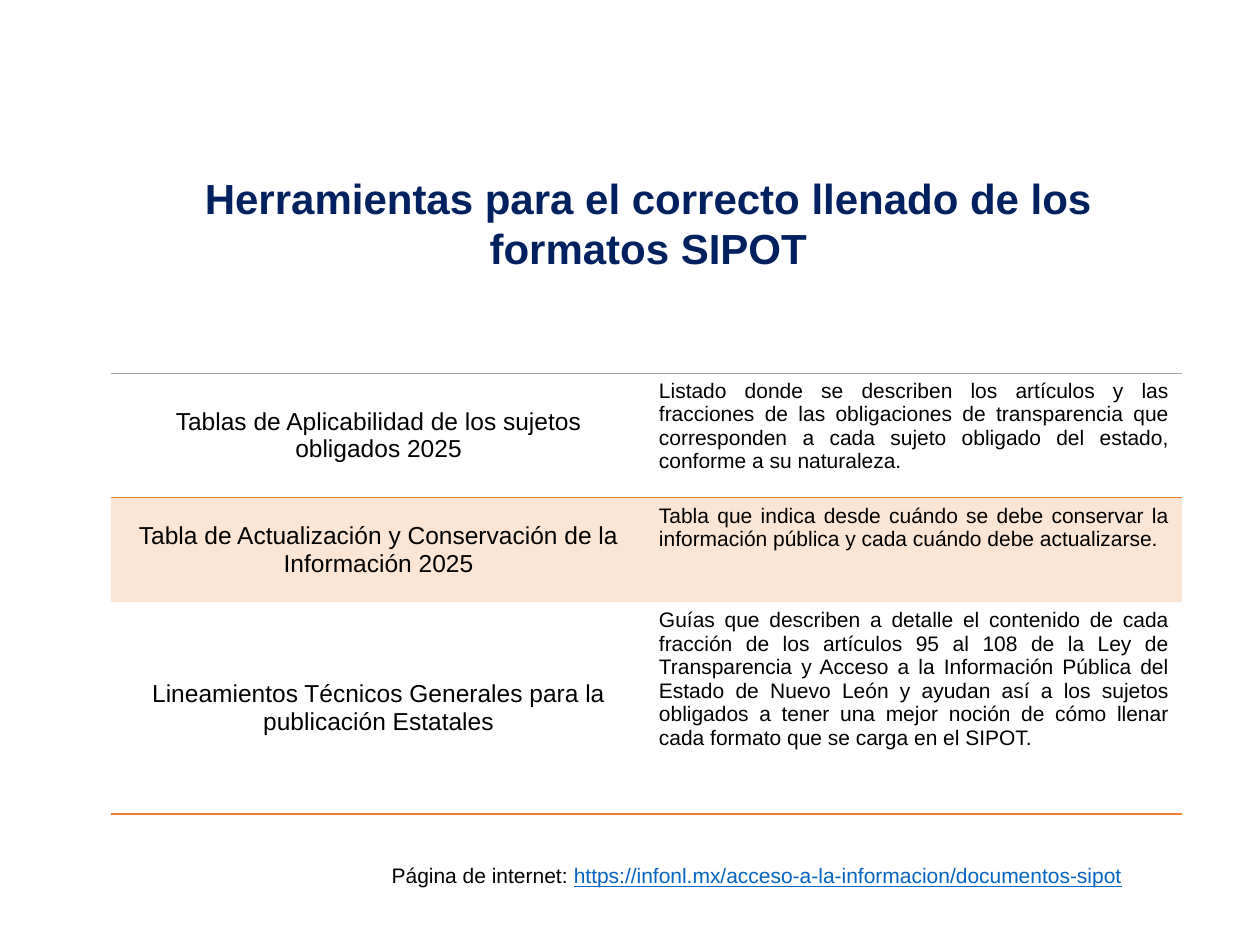
from pptx import Presentation
from pptx import util as u
from pptx.dml.color import RGBColor
from pptx.enum import text
from pptx.oxml.ns import qn
from lxml import etree

PX = 9144
ORANGE, GREY, BLACK = "ED7D31", "A5A5A5", "000000"
ALIGN = text.PP_ALIGN
TOOLS = [
    (99, "Tablas de Aplicabilidad de los sujetos obligados 2025",
     "Listado donde se describen los artículos y las fracciones de las "
     "obligaciones de transparencia que corresponden a cada sujeto obligado "
     "del estado, conforme a su naturaleza."),
    (83, "Tabla de Actualización y Conservación de la Información 2025",
     "Tabla que indica desde cuándo se debe conservar la información pública "
     "y cada cuándo debe actualizarse."),
    (168, "Lineamientos Técnicos Generales para la publicación Estatales",
     "Guías que describen a detalle el contenido de cada fracción de los "
     "artículos 95 al 108 de la Ley de Transparencia y Acceso a la Información "
     "Pública del Estado de Nuevo León y ayudan así a los sujetos obligados a "
     "tener una mejor noción de cómo llenar cada formato que se carga en el "
     "SIPOT."),
]
RULES = [(GREY, 0.5), (ORANGE, 1), None, (ORANGE, 1)]


def paint(hue):
    """Return the colour for a hex string."""
    return RGBColor.from_string(hue)


def scale(box):
    """Turn a box in px into EMU."""
    return [n * PX for n in box]


def write(para, words, size, hue=BLACK, bold=False, line=False):
    """Add one formatted run to a paragraph."""
    run = para.add_run()
    run.text = words
    font = run.font
    font.name, font.size = "Arial", u.Pt(size)
    font.bold, font.underline = bold, line
    font.color.rgb = paint(hue)


def edge(cell, side, rule):
    """Set one cell border, or clear it when there is no rule."""
    line = etree.SubElement(cell._tc.get_or_add_tcPr(), qn("a:ln" + side))
    if not rule:
        line.set("w", "0")
        etree.SubElement(line, qn("a:noFill"))
        return
    hue, width = rule
    line.set("w", str(u.Pt(width)))
    fill = etree.SubElement(line, qn("a:solidFill"))
    etree.SubElement(fill, qn("a:srgbClr"), val=hue)


def shade(cell, tint):
    """Fill a cell with a pale tint, or leave it clear."""
    if not tint:
        cell.fill.background()
        return
    cell.fill.solid()
    cell.fill.fore_color.rgb = paint(ORANGE)
    hue = cell._tc.tcPr.find(qn("a:solidFill"))[0]
    etree.SubElement(hue, qn("a:alpha"), val="20000")


def add_title(slide, box):
    """Place the heading in the title placeholder."""
    title = slide.shapes.title
    title.left, title.top, title.width, title.height = scale(box)
    frame = title.text_frame
    frame.word_wrap = True
    frame.auto_size = text.MSO_AUTO_SIZE.NONE
    frame.vertical_anchor = text.MSO_ANCHOR.MIDDLE
    para = frame.paragraphs[0]
    para.alignment = ALIGN.CENTER
    write(para, "Herramientas para el correcto llenado de los formatos SIPOT",
          24, "002060", bold=True)


def add_tools(slide, box):
    """Place the table of tools and their descriptions."""
    table = slide.shapes.add_table(len(TOOLS), 2, *scale(box)).table
    table.first_row = table.horz_banding = False
    for col in table.columns:
        col.width = box[2] * PX // 2
    for i, (height, *words) in enumerate(TOOLS):
        table.rows[i].height = height * PX
        for j, (size, align, anchor) in enumerate([
                (14, ALIGN.CENTER, text.MSO_ANCHOR.MIDDLE),
                (12, ALIGN.JUSTIFY, text.MSO_ANCHOR.TOP)]):
            cell = table.cell(i, j)
            cell.vertical_anchor = anchor
            for side, rule in zip("LRTB", (None, None, *RULES[i:i + 2])):
                edge(cell, side, rule)
            shade(cell, i % 2)
            para = cell.text_frame.paragraphs[0]
            para.alignment = align
            write(para, words[j], size)


def add_source(slide, box):
    """Place the line with the web address."""
    frame = slide.shapes.add_textbox(*scale(box)).text_frame
    frame.word_wrap = True
    frame.auto_size = text.MSO_AUTO_SIZE.SHAPE_TO_FIT_TEXT
    para = frame.paragraphs[0]
    write(para, "Página de internet: ", 12)
    write(para, "https://infonl.mx/acceso-a-la-informacion/documentos-sipot",
          12, "0563C1", line=True)


def main():
    """Build and save the slide."""
    deck = Presentation()
    deck.slide_width, deck.slide_height = scale((1000, 750))
    slide = deck.slides.add_slide(deck.slide_layouts[5])
    add_title(slide, (149, 158, 731, 37))
    add_tools(slide, (88, 296, 850, 350))
    add_source(slide, (301, 680, 638, 30))
    deck.save("out.pptx")


if __name__ == "__main__":
    main()
